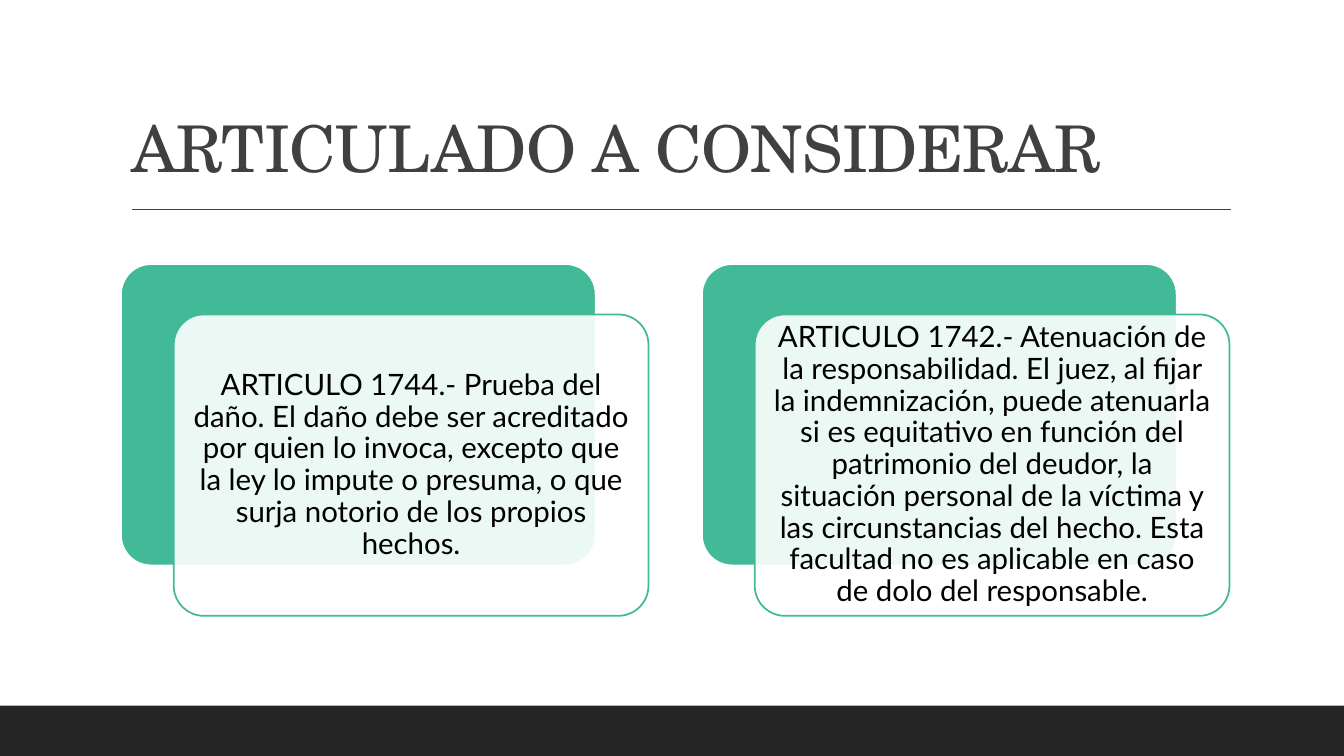
import pptx
import pptx.util
import pptx.dml.color
import pptx.enum.shapes
import pptx.enum.text
import pptx.oxml.ns
import lxml.etree

Pt = pptx.util.Pt
RGBColor = pptx.dml.color.RGBColor
qn = pptx.oxml.ns.qn
SHAPE = pptx.enum.shapes.MSO_SHAPE
ANCHOR = pptx.enum.text.MSO_ANCHOR

WHITE = RGBColor(0xFF, 0xFF, 0xFF)
BLACK = RGBColor(0x00, 0x00, 0x00)
GREEN = RGBColor(0x42, 0xBA, 0x97)
GREY = RGBColor(0x40, 0x40, 0x40)
CHARCOAL = RGBColor(0x26, 0x26, 0x26)

ARTICLES = [
    "ARTICULO 1744.- Prueba del daño. El daño debe ser acreditado por quien lo "
    "invoca, excepto que la ley lo impute o presuma, o que surja notorio de los "
    "propios hechos.",
    "ARTICULO 1742.- Atenuación de la responsabilidad. El juez, al fijar la "
    "indemnización, puede atenuarla si es equitativo en función del patrimonio "
    "del deudor, la situación personal de la víctima y las circunstancias del "
    "hecho. Esta facultad no es aplicable en caso de dolo del responsable.",
]
CARD_LEFT, CARD_TOP = 86.4, 188.6
CARD_WIDTH, CARD_HEIGHT = 339.1, 215.3
CARD_PITCH = 415
FRONT_DX, FRONT_DY = 37.7, 36


def add_card(slide, left, top, fill, line):
    card = slide.shapes.add_shape(SHAPE.ROUNDED_RECTANGLE, Pt(left), Pt(top),
                                  Pt(CARD_WIDTH), Pt(CARD_HEIGHT))
    card.adjustments[0] = 0.1
    card.shadow.inherit = False
    card.fill.solid()
    card.fill.fore_color.rgb = fill
    card.line.color.rgb = line
    card.line.width = Pt(1.25)
    return card


prs = pptx.Presentation()
prs.slide_width, prs.slide_height = Pt(960), Pt(540)
slide = prs.slides.add_slide(prs.slide_layouts[5])
slide.background.fill.solid()
slide.background.fill.fore_color.rgb = WHITE

# Title
title = slide.shapes.title
title.left, title.top, title.width, title.height = Pt(86.4), Pt(22.3), Pt(792), Pt(114.5)
title.text_frame.text = "ARTICULADO A CONSIDERAR"
title.text_frame.vertical_anchor = ANCHOR.BOTTOM
title.text_frame.auto_size = pptx.enum.text.MSO_AUTO_SIZE.NONE
heading = title.text_frame.paragraphs[0]
heading.alignment = pptx.enum.text.PP_ALIGN.LEFT
heading.line_spacing = 0.9
heading.font.size = Pt(46)
heading.font.name = "TeX Gyre Schola"
heading.font.color.rgb = GREY
heading.runs[0]._r.get_or_add_rPr().set("spc", "-50")

# Rule under the title
rule = slide.shapes.add_connector(pptx.enum.shapes.MSO_CONNECTOR.STRAIGHT,
                                  Pt(94.3), Pt(149.6), Pt(879), Pt(149.6))
rule.line.color.rgb = GREY
rule.line.width = Pt(1)
lxml.etree.SubElement(rule._element.spPr, qn("a:effectLst"))

# Footer band
footer = slide.shapes.add_shape(SHAPE.RECTANGLE, Pt(0), Pt(504), Pt(960), Pt(36))
footer.shadow.inherit = False
footer.fill.solid()
footer.fill.fore_color.rgb = CHARCOAL
footer.line.fill.background()

# Article cards: a green back and a translucent front holding the text
for column, article in enumerate(ARTICLES):
    left = CARD_LEFT + column * CARD_PITCH
    add_card(slide, left, CARD_TOP, GREEN, WHITE)
    front = add_card(slide, left + FRONT_DX, CARD_TOP + FRONT_DY, WHITE, GREEN)
    front_color = front._element.spPr.find(qn("a:solidFill")).find(qn("a:srgbClr"))
    lxml.etree.SubElement(front_color, qn("a:alpha"), val="90000")

    frame = front.text_frame
    frame.word_wrap = True
    frame.vertical_anchor = ANCHOR.MIDDLE
    frame.margin_left = frame.margin_right = Pt(6.3)
    frame.margin_top = frame.margin_bottom = Pt(6.3)
    frame.text = article
    body = frame.paragraphs[0]
    body.alignment = pptx.enum.text.PP_ALIGN.CENTER
    body.line_spacing = 0.9
    body.font.size = Pt(21)
    body.font.name = "Lato"
    body.font.color.rgb = BLACK

prs.save("out.pptx")
